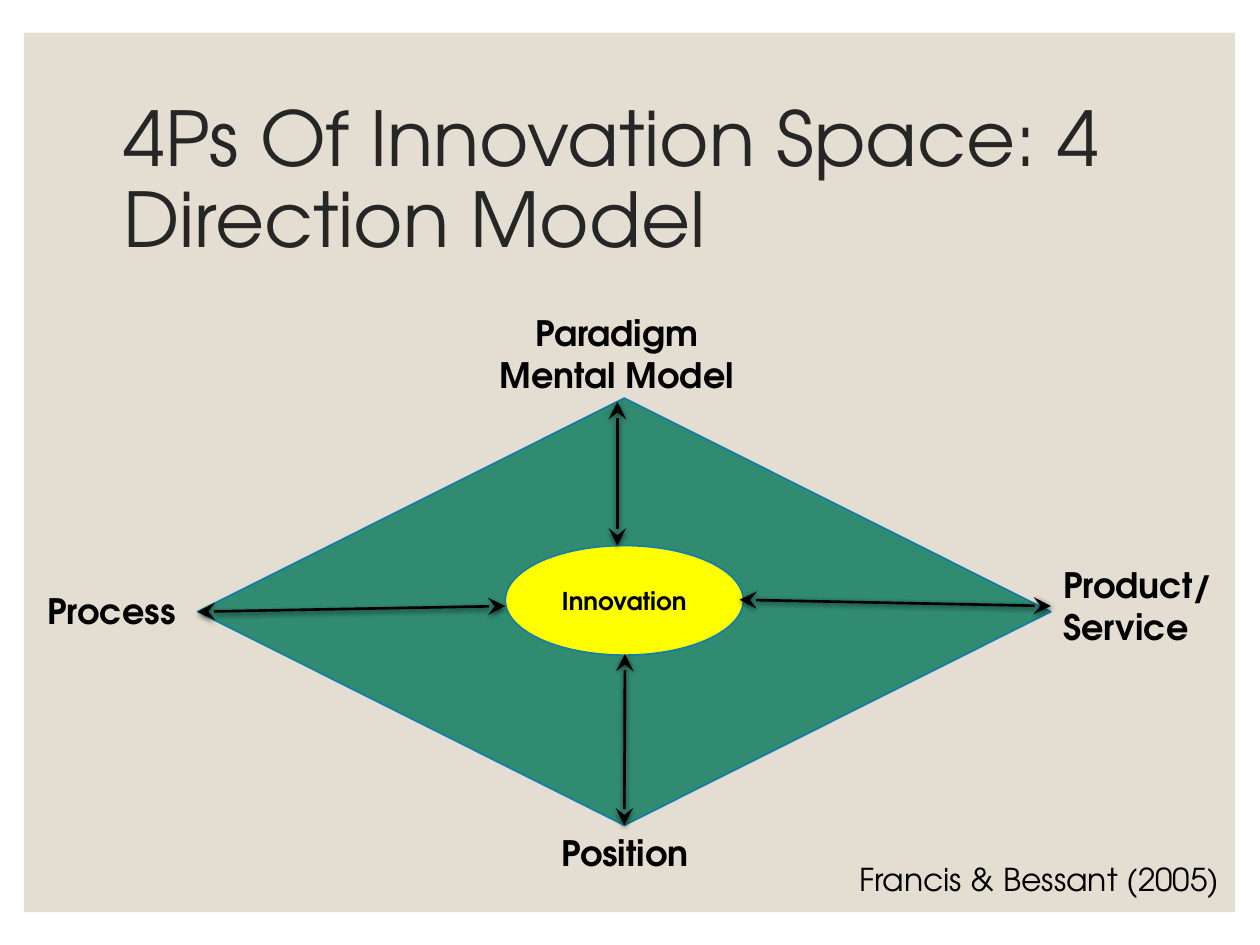
from lxml import etree
from pptx import Presentation
from pptx.dml.color import RGBColor
from pptx.enum.shapes import MSO_CONNECTOR, MSO_SHAPE
from pptx.enum.text import MSO_ANCHOR as ANCHOR, PP_ALIGN as ALIGN
from pptx.oxml import parse_xml
from pptx.oxml.ns import qn
from pptx.util import Inches, Pt

FONT = "TeX Gyre Adventor"
SHADOW = (
    '<a:effectLst xmlns:a="http://schemas.openxmlformats.org/drawingml/2006/main">'
    '<a:outerShdw blurRad="38100" dist="12700" dir="5400000" rotWithShape="0">'
    '<a:srgbClr val="000000"><a:alpha val="63000"/></a:srgbClr>'
    '</a:outerShdw></a:effectLst>'
)


def rgb(value):
    return RGBColor.from_string(value)


def write(sp, lines, size, color="000000", bold=False, align=ALIGN.LEFT,
          anchor=ANCHOR.TOP, spacing=1.0):
    """Fill a shape's text frame with one paragraph per line."""
    tf = sp.text_frame
    tf.word_wrap = True
    tf.vertical_anchor = anchor
    for i, line in enumerate(lines):
        p = tf.paragraphs[0] if i == 0 else tf.add_paragraph()
        p.alignment, p.line_spacing = align, spacing
        r = p.add_run()
        r.text = line
        for name, value in {"name": FONT, "size": Pt(size), "bold": bold}.items():
            setattr(r.font, name, value)
        r.font.color.rgb = rgb(color)


prs = Presentation()
prs.slide_width, prs.slide_height = Inches(10), Inches(7.5)
s = prs.slides.add_slide(prs.slide_layouts[6])

# Panel, diamond and centre ellipse
shapes = {}
for name, kind, box, fill, line in [
    ("panel", MSO_SHAPE.RECTANGLE, (0.19, 0.26, 9.61, 6.98), "E3DED1", None),
    ("diamond", MSO_SHAPE.DIAMOND, (1.57, 3.16, 6.77, 3.39), "318B71", "147EA6"),
    ("centre", MSO_SHAPE.OVAL, (4.01, 4.33, 1.89, 0.87), "FFFF00", "147EA6"),
]:
    sp = s.shapes.add_shape(kind, *map(Inches, box))
    sp.shadow.inherit = False
    sp.fill.solid()
    sp.fill.fore_color.rgb = rgb(fill)
    if line:
        sp.line.color.rgb = rgb(line)
        sp.line.width = Pt(1)
    else:
        sp.line.fill.background()
    shapes[name] = sp
write(shapes["centre"], ["Innovation"], 14, bold=True, align=ALIGN.CENTER,
      anchor=ANCHOR.MIDDLE)

# Double-headed arrows; the last value is the diamond corner to join, if any
for x1, y1, x2, y2, corner in [
    (8.34, 4.81, 5.87, 4.76, None),
    (4.9, 3.19, 4.9, 4.33, None),
    (4.96, 6.55, 4.96, 5.19, 2),
    (1.57, 4.85, 4.01, 4.81, 1),
]:
    arrow = s.shapes.add_connector(MSO_CONNECTOR.STRAIGHT,
                                   *map(Inches, (x1, y1, x2, y2)))
    if corner is not None:
        arrow.begin_connect(shapes["diamond"], corner)
    arrow.line.color.rgb = rgb("000000")
    arrow.line.width = Pt(1.5)
    ln = arrow.line._get_or_add_ln()
    for end in ("a:headEnd", "a:tailEnd"):
        etree.SubElement(ln, qn(end), type="stealth", w="lg", len="lg")
    arrow._element.spPr.append(parse_xml(SHADOW))

# Title, corner labels and citation
label = {"size": 20, "bold": True}
centred = {**label, "align": ALIGN.CENTER}
for box, lines, style in [
    ((0.88, 0.7, 8.25, 1.5), ["4Ps Of Innovation Space: 4 Direction Model"],
     {"size": 43.2, "color": "262626", "anchor": ANCHOR.MIDDLE, "spacing": 0.9}),
    ((8.34, 4.42, 1.48, 0.77), ["Product/", "Service"], label),
    ((3.8, 2.42, 2.19, 0.77), ["Paradigm", "Mental Model"], centred),
    ((0.17, 4.63, 1.43, 0.44), ["Process"], centred),
    ((4.22, 6.55, 1.48, 0.44), ["Position"], centred),
    ((6.72, 6.78, 3.11, 0.4), ["Francis & Bessant (2005)"], {"size": 18}),
]:
    write(s.shapes.add_textbox(*map(Inches, box)), lines, **style)

prs.save("out.pptx")
